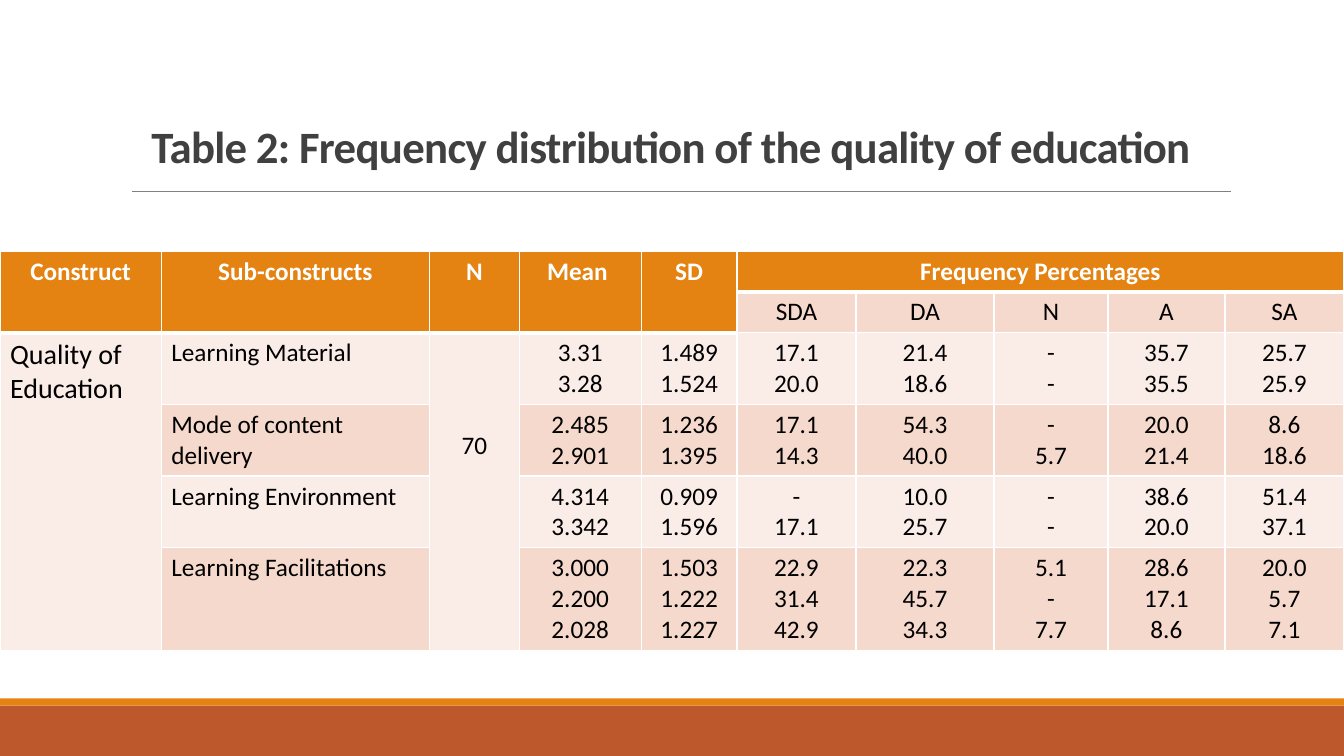
import pptx
import pptx.dml.color
import pptx.enum.shapes
import pptx.enum.text
import pptx.oxml
import pptx.oxml.ns
import pptx.util
from pptx.util import Inches

COLOURS = {
    "rust": "BD582C", "orange": "E48312", "rule": "808080", "title": "404040",
    "white": "FFFFFF", "black": "000000", "pale": "FAEDE7", "tint": "F5D9CC",
}
FONT = "Calibri"
CENTER = pptx.enum.text.PP_ALIGN.CENTER
LEFT = pptx.enum.text.PP_ALIGN.LEFT

COLUMN_WIDTHS = [1.6, 2.66, 0.89, 1.21, 0.95, 1.18, 1.37, 1.13, 1.16, 1.18]
ROW_HEIGHTS = [0.4, 0.4, 0.71, 0.71, 0.71, 1.02]
ROW_FILLS = ["orange", "tint", "pale", "tint", "pale", "tint"]
FIRST_SCALE_COLUMN = 5
# One list per table row; a line break separates paragraphs, None is a merged cell
ROWS = [
    ["Construct", "Sub-constructs", "N", "Mean ", "SD",
     "Frequency Percentages", None, None, None, None],
    [None, None, None, None, None, "SDA", "DA", "N", "A", "SA"],
    ["Quality of Education", "Learning Material", "70", "3.31\n3.28", "1.489\n1.524",
     "17.1\n20.0", "21.4\n18.6", "-\n-", "35.7\n35.5", "25.7\n25.9"],
    [None, "Mode of content delivery", None, "2.485\n2.901", "1.236\n1.395",
     "17.1\n14.3", "54.3\n40.0", "-\n5.7", "20.0\n21.4", "8.6\n18.6"],
    [None, "Learning Environment", None, "4.314\n3.342", "0.909\n1.596",
     "-\n17.1", "10.0\n25.7", "-\n-", "38.6\n20.0", "51.4\n37.1"],
    [None, "Learning Facilitations", None, "3.000\n2.200\n2.028", "1.503\n1.222\n1.227",
     "22.9\n31.4\n42.9", "22.3\n45.7\n34.3", "5.1\n-\n7.7", "28.6\n17.1\n8.6",
     "20.0\n5.7\n7.1"],
]


def colour(name):
    return pptx.dml.color.RGBColor.from_string(COLOURS[name])


def style_paragraph(para, size, colour_name, bold, align):
    para.alignment = align
    para.font.name = FONT
    para.font.size = pptx.util.Pt(size)
    para.font.bold = bold
    para.font.color.rgb = colour(colour_name)


def set_borders(cell, bottom_width):
    properties = cell._tc.get_or_add_tcPr()
    widths = {"lnL": 1, "lnR": 1, "lnT": 1, "lnB": bottom_width}
    for index, (side, width) in enumerate(widths.items()):
        line = pptx.oxml.parse_xml(
            f'<a:{side} {pptx.oxml.ns.nsdecls("a")} w="{pptx.util.Pt(width)}">'
            f'<a:solidFill><a:srgbClr val="{COLOURS["white"]}"/></a:solidFill></a:{side}>')
        properties.insert(index, line)


def add_footer_bars(page, left, top, width, height):
    strip = 0.07
    bars = [("rust", top + strip, height - strip), ("orange", top, strip)]
    for name, bar_top, bar_height in bars:
        bar = page.shapes.add_shape(
            pptx.enum.shapes.MSO_SHAPE.RECTANGLE,
            Inches(left), Inches(bar_top), Inches(width), Inches(bar_height))
        bar.shadow.inherit = False
        bar.fill.solid()
        bar.fill.fore_color.rgb = colour(name)
        bar.line.fill.background()


def add_heading(page, left, top, width, height):
    # Rule below the title
    rule_left, rule_top = left + 0.11, top + height + 0.14
    rule = page.shapes.add_connector(
        pptx.enum.shapes.MSO_CONNECTOR.STRAIGHT,
        Inches(rule_left), Inches(rule_top), Inches(rule_left + 10.9), Inches(rule_top))
    rule.line.color.rgb = colour("rule")
    rule.line.width = pptx.util.Pt(0.5)
    rule._element.spPr.append(
        pptx.oxml.parse_xml(f'<a:effectLst {pptx.oxml.ns.nsdecls("a")}/>'))

    # Title
    title = page.shapes.title
    title.left, title.top = Inches(left), Inches(top)
    title.width, title.height = Inches(width), Inches(height)
    frame = title.text_frame
    frame.word_wrap = True
    frame.auto_size = pptx.enum.text.MSO_AUTO_SIZE.NONE
    frame.vertical_anchor = pptx.enum.text.MSO_ANCHOR.BOTTOM
    para = frame.paragraphs[0]
    span = para.add_run()
    span.text = "Table 2: Frequency distribution of the quality of education "
    span._r.get_or_add_rPr().set("spc", "-50")
    style_paragraph(para, 32, "title", True, CENTER)
    para.line_spacing = 0.85


def add_frequency_table(page, left, top, width, height):
    table = page.shapes.add_table(
        len(ROW_HEIGHTS), len(COLUMN_WIDTHS),
        Inches(left), Inches(top), Inches(width), Inches(height)).table
    for column, column_width in zip(table.columns, COLUMN_WIDTHS):
        column.width = Inches(column_width)
    for row, row_height in zip(table.rows, ROW_HEIGHTS):
        row.height = Inches(row_height)

    # Cells
    for row_index, texts in enumerate(ROWS):
        for column_index, text in enumerate(texts):
            cell = table.cell(row_index, column_index)
            in_header = row_index == 0 or (
                row_index == 1 and column_index < FIRST_SCALE_COLUMN)
            set_borders(cell, 3 if in_header else 1)
            cell.fill.solid()
            cell.fill.fore_color.rgb = colour(
                "orange" if in_header else ROW_FILLS[row_index])
            if text is None:
                continue
            cell.text_frame.text = text
            is_label = row_index > 1 and column_index < 2
            size = 20 if is_label and column_index == 0 else 18
            for para in cell.text_frame.paragraphs:
                style_paragraph(para, size, "white" if in_header else "black",
                                in_header, LEFT if is_label else CENTER)

    # Merged cells
    for column_index in range(FIRST_SCALE_COLUMN):
        table.cell(0, column_index).merge(table.cell(1, column_index))
    table.cell(0, FIRST_SCALE_COLUMN).merge(table.cell(0, len(COLUMN_WIDTHS) - 1))
    for column_index in (0, 2):
        table.cell(2, column_index).merge(table.cell(len(ROWS) - 1, column_index))
    table.cell(2, 2).margin_top = Inches(0.97)


def main():
    deck = pptx.Presentation()
    deck.slide_width, deck.slide_height = Inches(13.33), Inches(7.5)
    page = deck.slides.add_slide(deck.slide_layouts[5])
    add_footer_bars(page, 0, 6.93, 13.33, 0.57)
    add_heading(page, 1.2, 0.17, 11, 1.59)
    add_frequency_table(page, 0, 2.49, 13.33, sum(ROW_HEIGHTS))
    deck.save("out.pptx")


if __name__ == "__main__":
    main()
